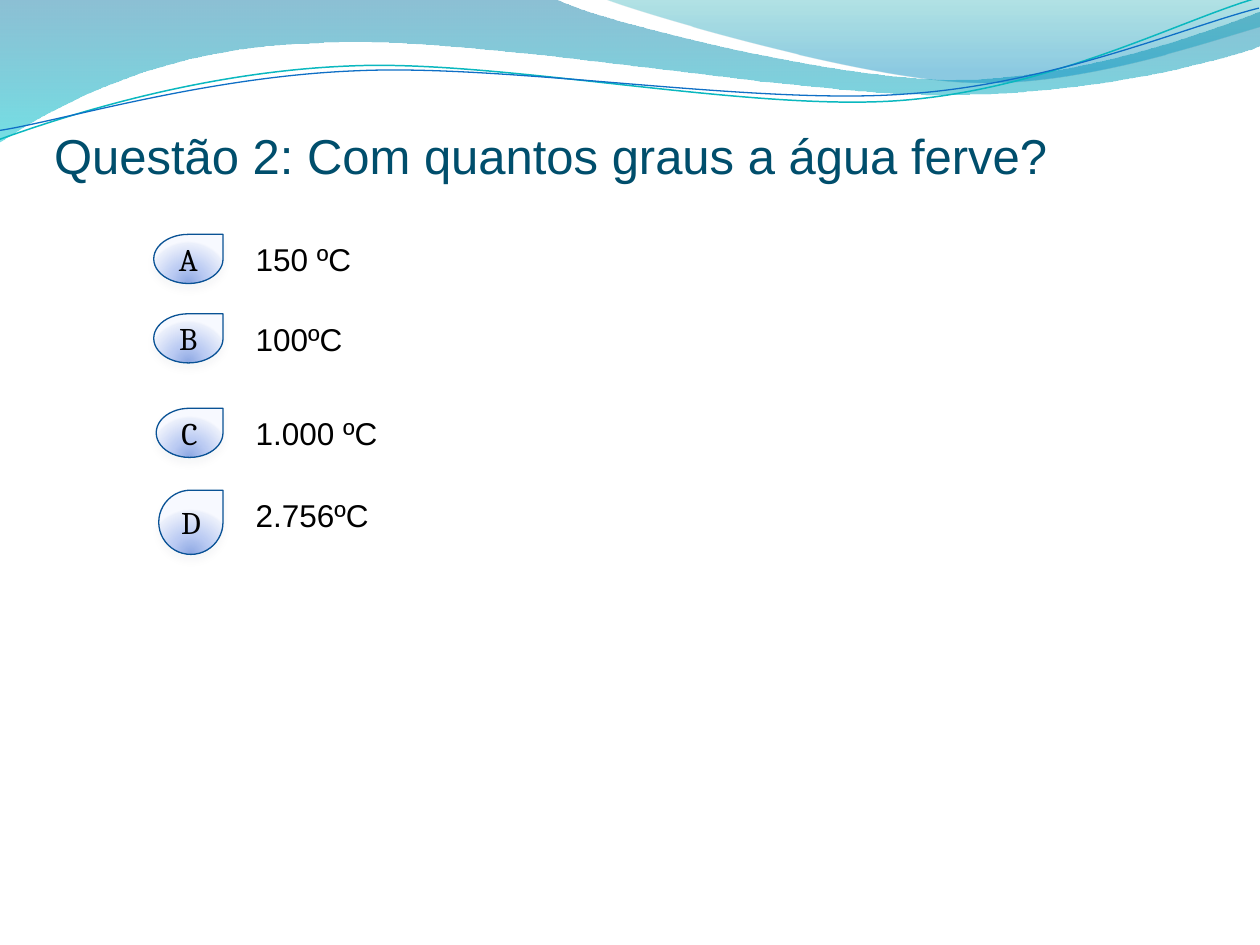
from lxml import etree
from pptx import Presentation
from pptx.dml.color import RGBColor
from pptx.enum.shapes import MSO_SHAPE
from pptx.enum.text import MSO_ANCHOR, MSO_AUTO_SIZE, PP_ALIGN
from pptx.oxml.ns import qn
from pptx.util import Pt

PX = 9144
NS = 'xmlns:a="http://schemas.openxmlformats.org/drawingml/2006/main"'
DOWN = '<a:lin ang="5400000" scaled="0"/>'
GLOW = ('<a:path path="circle"><a:fillToRect l="50000" t="130000" '
        'r="50000" b="-30000"/></a:path>')
SHADE = (f'<a:outerShdw {NS} blurRad="57150" dist="38100" dir="5400000" '
         'rotWithShape="0"><a:srgbClr val="042747"><a:alpha val="3000"/>'
         '</a:srgbClr></a:outerShdw>')
hue = RGBColor.from_string


def trace(shapes, parts, close):
    dots = [part[i:i + 2] for part in parts for i in range(0, len(part), 2)]
    pen = shapes.build_freeform(*dots[0], scale=PX)
    pen.add_line_segments(dots[1:], close=close)
    shape = pen.convert_to_shape()
    shape.shadow.inherit = False
    lines = list(shape._element.spPr.iter(qn("a:lnTo")))
    for part in parts[1:]:
        count = len(part) // 2
        group, lines = lines[:count], lines[count:]
        if count == 3:
            bend = etree.Element(qn("a:cubicBezTo"))
            group[0].addprevious(bend)
            for line in group:
                bend.append(line[0])
                line.getparent().remove(line)
    return shape


def blend(shape, stops, tail):
    marks = "".join(
        f'<a:gs pos="{pos * 1000}"><a:srgbClr val="{tint}">'
        f'<a:alpha val="{alpha * 1000}"/></a:srgbClr></a:gs>'
        for pos, tint, alpha in stops)
    shape.fill.background()
    props = shape._element.spPr
    props.replace(props.find(qn("a:noFill")), etree.fromstring(
        f'<a:gradFill {NS} rotWithShape="1"><a:gsLst>{marks}</a:gsLst>'
        f'{tail}</a:gradFill>'))


deck = Presentation()
deck.slide_width, deck.slide_height = 1000 * PX, 750 * PX
slide = deck.slides.add_slide(deck.slide_layouts[5])
shapes = slide.shapes

waves = [
    ([(0, 0), (440, -1), (476, 17, 664, 63, 758, 63),
      (853, 63, 958, 26, 1000, 9), (1001, 36),
      (983, 44, 870, 76, 746, 75), (622, 75, 382, 28, 257, 34),
      (129, 36, 46, 83, -1, 113)],
     [(0, "0074A1", 45), (100, "00C6CF", 55)]),
    ([(479, -1), (509, 11, 682, 62, 769, 65),
      (856, 69, 961, 32, 1000, 21), (1000, 0)],
     [(0, "00A1A9", 30), (80, "008BBF", 45)]),
]
for parts, stops in waves:
    wave = trace(shapes, parts, True)
    blend(wave, stops, DOWN)
    wave.line.fill.background()

curves = [
    ([(-2, 87), (47, 72, 158, 41, 278, 42), (396, 42, 591, 93, 712, 90),
      (832, 87, 940, 36, 1000, 22)], "0AB8BF", 0.85),
    ([(-2, 80), (46, 75, 164, 45, 283, 46), (403, 46, 596, 88, 716, 85),
      (835, 83, 942, 42, 1001, 30)], "0F6FC6", 0.75),
]
pair = shapes.add_group_shape()
for parts, tint, width in curves:
    curve = trace(pair.shapes, parts, False)
    curve.rotation = 357.3
    curve.fill.background()
    curve.line.color.rgb = hue(tint)
    curve.line.width = Pt(width)

title = shapes.title
shapes._spTree.append(title._element)
title.left, title.top, title.width, title.height = (
    43 * PX, 21 * PX, 900 * PX, 125 * PX)
frame = title.text_frame
frame.text = "Questão 2: Com quantos graus a água ferve?"
frame.auto_size = MSO_AUTO_SIZE.NONE
frame.vertical_anchor = MSO_ANCHOR.BOTTOM
frame.margin_left = frame.margin_right = frame.margin_bottom = 0
frame.margin_top = 5 * PX
head = frame.paragraphs[0]
head.alignment = PP_ALIGN.LEFT
head.font.size = Pt(28)
head.font.name = "Arial"
head.font.color.rgb = hue("004E6C")

drops = [(0, "8DA8E3", 100), (43, "BBCBF3", 100),
         (93, "EAEFFB", 100), (100, "F7F9FF", 100)]
right = 177
rows = [
    ("A", "150 ºC", 186, 55, 39, 197),
    ("B", "100ºC", 249, 55, 39, 98),
    ("C", "1.000 ºC", 324, 53, 39, 126),
    ("D", "2.756ºC", 389, 51, 51, 126),
]
for mark, text, top, wide, high, span in rows:
    drop = shapes.add_shape(MSO_SHAPE.TEAR, (right - wide) * PX, top * PX,
                            wide * PX, high * PX)
    blend(drop, drops, GLOW)
    drop.line.color.rgb = hue("095295")
    drop.line.width = Pt(0.75)
    drop.shadow.inherit = False
    drop._element.spPr.find(qn("a:effectLst")).append(
        etree.fromstring(SHADE))
    drop.text_frame.vertical_anchor = MSO_ANCHOR.MIDDLE
    box = shapes.add_textbox(193 * PX, top * PX, span * PX, 40 * PX)
    box.text_frame.word_wrap = True
    box.text_frame.auto_size = MSO_AUTO_SIZE.SHAPE_TO_FIT_TEXT
    for item, words, face, side in (
            (drop, mark, "Cambria", PP_ALIGN.CENTER),
            (box, text, "Arial", PP_ALIGN.LEFT)):
        item.text_frame.text = words
        line = item.text_frame.paragraphs[0]
        line.alignment = side
        line.font.size = Pt(18)
        line.font.name = face
        line.font.color.rgb = hue("000000")

deck.save("out.pptx")
